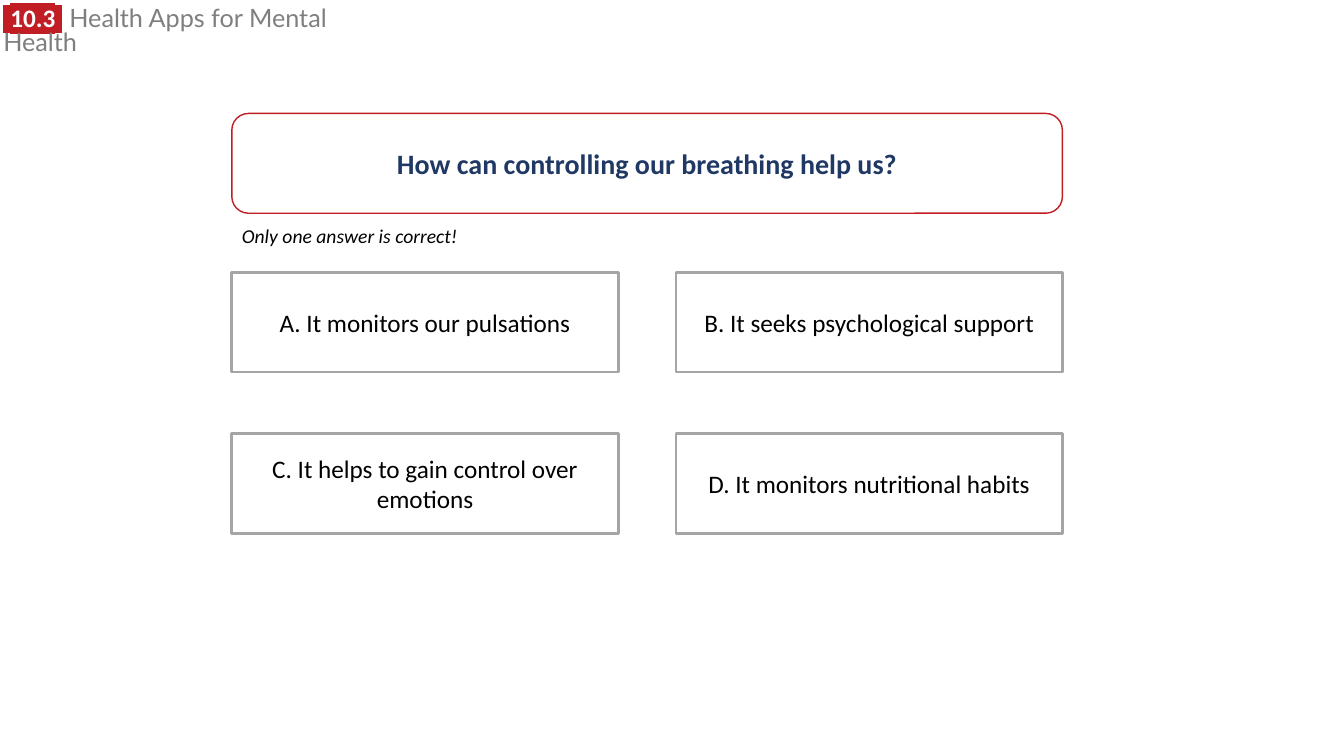
from lxml.etree import SubElement
from pptx import Presentation
from pptx.dml.color import RGBColor
from pptx.enum.shapes import MSO_SHAPE
from pptx.enum.text import MSO_ANCHOR, MSO_AUTO_SIZE, PP_ALIGN
from pptx.oxml.ns import qn
from pptx.util import Inches, Pt

COLOURS = {"red": "C01E24", "navy": "203864", "grey": "7F7F7F",
           "border": "A5A5A5", "black": "000000", "white": "FFFFFF"}


def colour(name):
    return RGBColor.from_string(COLOURS[name])


def add_span(para, text, size=18, face="Calibri", ink="black",
             bold=False, italic=False, highlight=None):
    span = para.add_run()
    span.text = text
    font = span.font
    font.size, font.name, font.bold, font.italic = Pt(size), face, bold, italic
    font.color.rgb = colour(ink)
    if highlight:
        properties = span._r.get_or_add_rPr()
        mark = SubElement(properties, qn("a:highlight"))
        SubElement(mark, qn("a:srgbClr"), val=COLOURS[highlight])
        properties.find(qn("a:solidFill")).addnext(mark)


class QuizPage:
    """Places elements by percentages of the slide's width and height."""

    def __init__(self, deck):
        self.deck = deck
        self.page = deck.slides.add_slide(deck.slide_layouts[5])

    def area(self, left, top, width, height):
        across, down = self.deck.slide_width, self.deck.slide_height
        return [int(share * side / 100) for share, side in
                zip((left, top, width, height), (across, down, across, down))]

    def title(self, area, number, text):
        box = self.page.shapes.title
        box.left, box.top, box.width, box.height = self.area(*area)
        frame = box.text_frame
        frame.auto_size = MSO_AUTO_SIZE.NONE
        frame.word_wrap = True
        frame.vertical_anchor = MSO_ANCHOR.TOP
        para = frame.paragraphs[0]
        para.alignment = PP_ALIGN.LEFT
        para.line_spacing = 0.8
        for piece, face in ((" ", "Arial"), (number, "Calibri"), (" ", "Arial")):
            add_span(para, piece, face=face, ink="white", bold=True, highlight="red")
        add_span(para, " ", face="Arial", ink="grey")
        add_span(para, text, face="Lato", ink="grey")

    def label(self, area, text, **style):
        frame = self.page.shapes.add_textbox(*self.area(*area)).text_frame
        frame.word_wrap = True
        add_span(frame.paragraphs[0], text, **style)

    def card(self, area, text, kind=MSO_SHAPE.RECTANGLE, border="border",
             weight=2, **style):
        box = self.page.shapes.add_shape(kind, *self.area(*area))
        box.shadow.inherit = False
        box.fill.solid()
        box.fill.fore_color.rgb = colour("white")
        box.line.color.rgb = colour(border)
        box.line.width = Pt(weight)
        frame = box.text_frame
        frame.word_wrap = True
        frame.vertical_anchor = MSO_ANCHOR.MIDDLE
        para = frame.paragraphs[0]
        para.alignment = PP_ALIGN.CENTER
        add_span(para, text, **style)


def main():
    deck = Presentation()
    deck.slide_width, deck.slide_height = Inches(13.33), Inches(7.5)
    quiz = QuizPage(deck)
    left, width, height = 17.25, 61.8, 13.2
    answer_width, answer_top = 28.75, 36
    column_step, row_step = width - answer_width, 21.33

    quiz.title((-0.5, 0.4, 29.2, 4.5), "10.3", "Health Apps for Mental Health")
    quiz.card((left, 15, width, height), "How can controlling our breathing help us?",
              kind=MSO_SHAPE.ROUNDED_RECTANGLE, border="red", weight=1,
              size=20, ink="navy", bold=True)
    quiz.label((left, 28.9, 17.7, 4.5), "Only one answer is correct!",
               size=14, italic=True)

    answers = ("A. It monitors our pulsations",
               "B. It seeks psychological support",
               "C. It helps to gain control over emotions",
               "D. It monitors nutritional habits")
    for index, answer in enumerate(answers):
        row, column = divmod(index, 2)
        quiz.card((left + column * column_step, answer_top + row * row_step,
                   answer_width, height), answer)
    deck.save("out.pptx")


if __name__ == "__main__":
    main()
